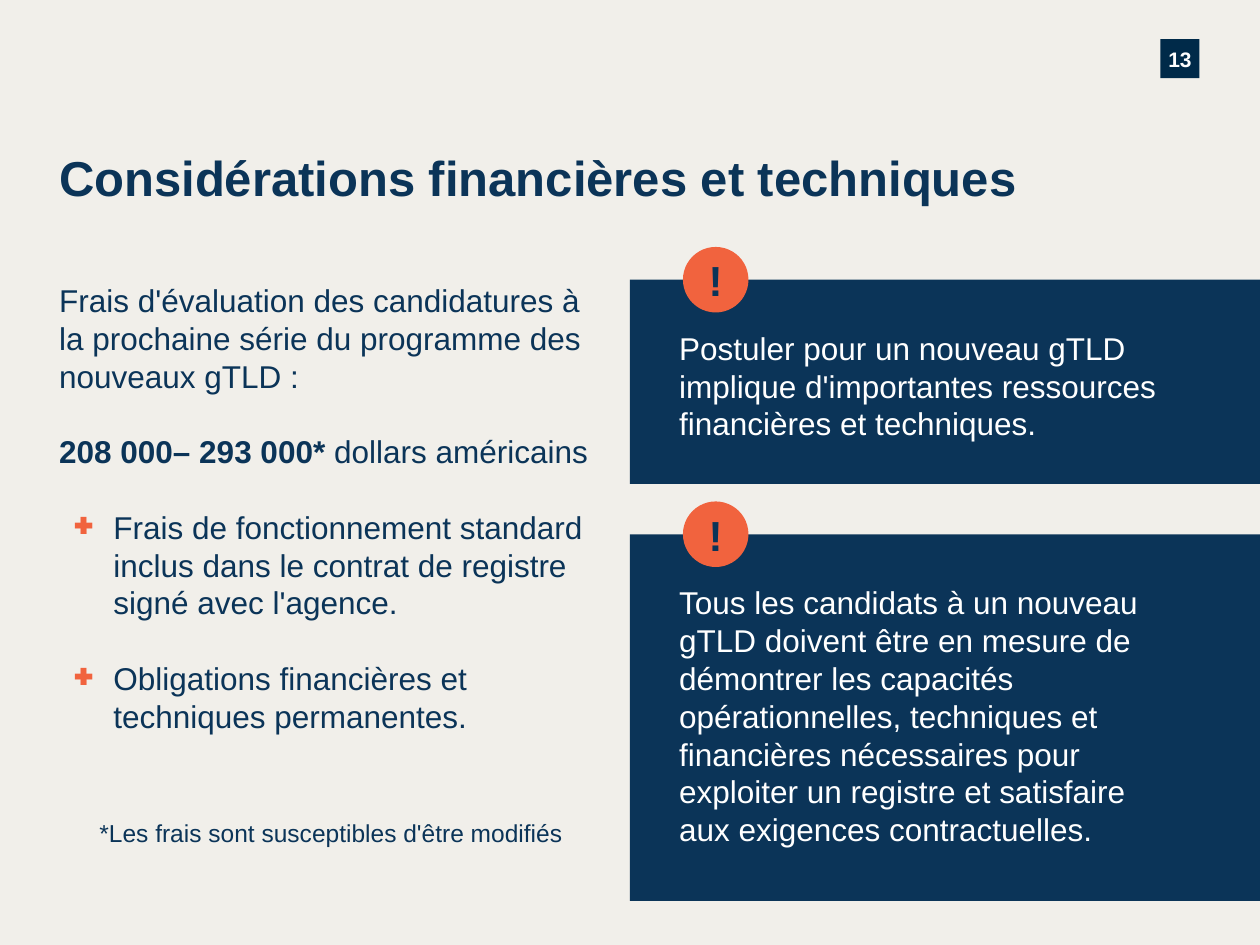
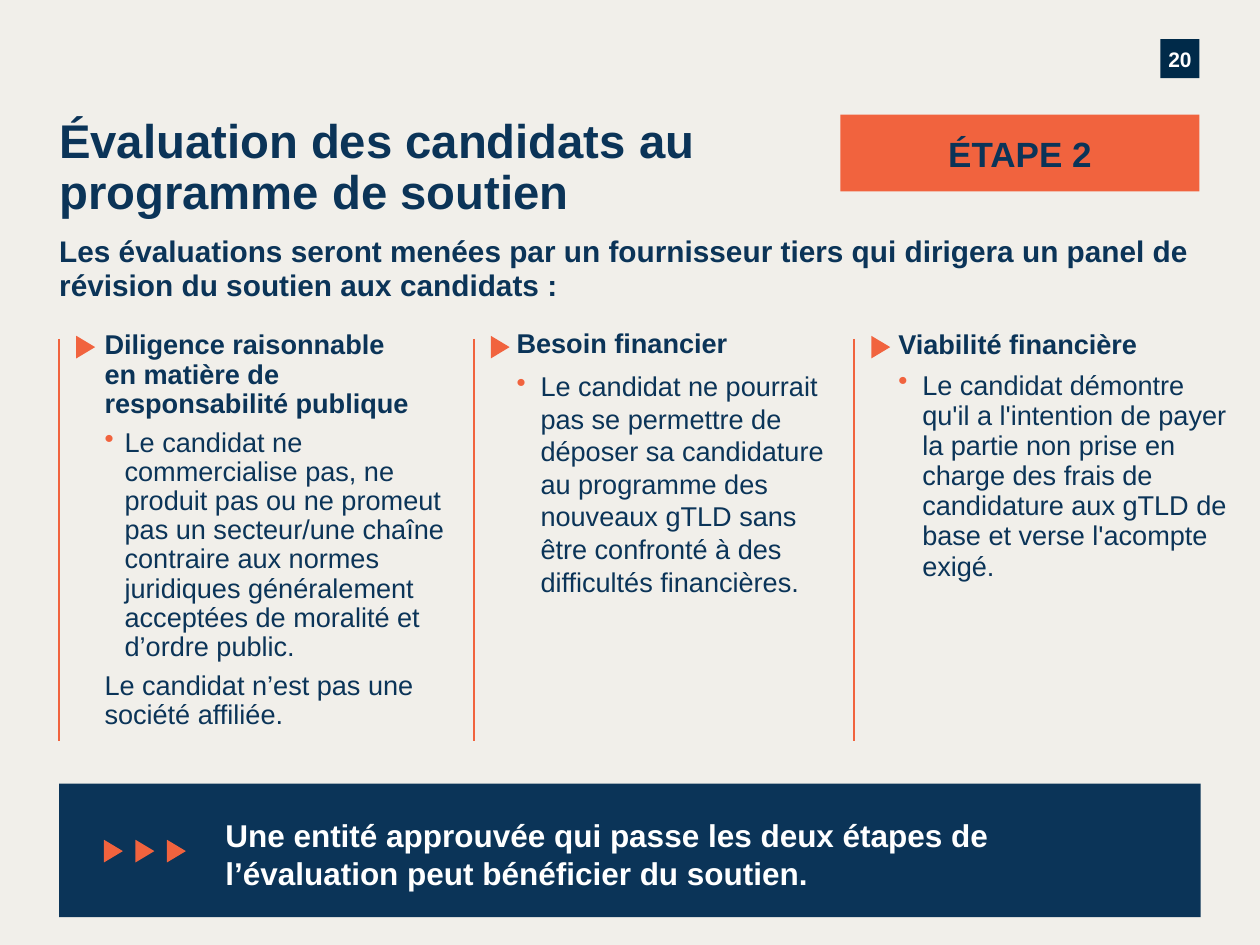
from dataclasses import dataclass
from typing import Optional, Sequence, Union

from lxml import etree
from pptx import Presentation
from pptx.dml.color import RGBColor
from pptx.enum.shapes import MSO_CONNECTOR, MSO_SHAPE
from pptx.enum.text import MSO_ANCHOR, PP_ALIGN
from pptx.oxml.ns import qn
from pptx.util import Inches, Pt

RECTANGLE = MSO_SHAPE.RECTANGLE
OVAL = MSO_SHAPE.OVAL
TRIANGLE = MSO_SHAPE.ISOSCELES_TRIANGLE
STRAIGHT = MSO_CONNECTOR.STRAIGHT
TOP = MSO_ANCHOR.TOP
MIDDLE = MSO_ANCHOR.MIDDLE
LEFT = PP_ALIGN.LEFT
CENTER = PP_ALIGN.CENTER


@dataclass(frozen=True)
class Theme:
    font: str = "Arial"
    paper: str = "F1EFEA"
    navy: str = "0B3458"
    badge: str = "002A49"
    orange: str = "F1633E"
    white: str = "FFFFFF"
    title: float = 28
    long_title: float = 27
    mark: float = 24
    stage: float = 20
    body: float = 18
    lead: float = 17
    criterion: float = 15.5
    note: float = 14
    number: float = 12
    body_line: float = 21.6
    margin: float = 0.47
    content_width: float = 9.06


THEME = Theme()


@dataclass(frozen=True)
class Area:
    left: float
    top: float
    width: float
    height: float


@dataclass(frozen=True)
class Insets:
    left: float = 0
    top: float = 0
    right: float = 0
    bottom: float = 0


@dataclass(frozen=True)
class Span:
    text: str
    bold: bool = False


@dataclass(frozen=True)
class Para:
    spans: Sequence[Span]
    size: float
    color: str = THEME.navy
    align: PP_ALIGN = LEFT
    line: Optional[Union[float, Pt]] = None
    before: float = 0
    after: float = 0
    bullet: str = ""
    indent: float = 0
    hanging: float = 0


@dataclass(frozen=True)
class Callout:
    top: float
    height: float
    text: str


@dataclass(frozen=True)
class Criterion:
    rule_left: float
    text_left: float
    text_top: float
    width: float
    height: float
    heading: str
    detail: str
    heading_line: float
    detail_line: float
    indent: float
    closing: str = ""


CALLOUTS = (
    Callout(4.24, 2.91, "Tous les candidats à un nouveau gTLD doivent être en mesure de "
            "démontrer les capacités opérationnelles, techniques et financières nécessaires "
            "pour exploiter un registre et satisfaire aux exigences contractuelles."),
    Callout(2.22, 1.62, "Postuler pour un nouveau gTLD implique d'importantes ressources "
            "financières et techniques."),
)

CRITERIA = (
    Criterion(0.47, 0.83, 2.63, 2.76, 3.24,
              "Diligence raisonnable\nen matière de responsabilité publique",
              "Le candidat ne commercialise pas, ne produit pas ou ne promeut pas un "
              "secteur/une chaîne contraire aux normes juridiques généralement acceptées "
              "de moralité et d’ordre public.",
              16.6, 16.6, 0.16, "Le candidat n’est pas une société affiliée."),
    Criterion(3.76, 4.1, 2.62, 2.54, 2.53, "Besoin financier",
              "Le candidat ne pourrait pas se permettre de déposer sa candidature au "
              "programme des nouveaux gTLD sans être confronté à des difficultés financières.",
              16.6, 18.6, 0.19),
    Criterion(6.78, 7.13, 2.62, 2.66, 3.03, "Viabilité financière",
              "Le candidat démontre qu'il a l'intention de payer la partie non prise en "
              "charge des frais de candidature aux gTLD de base et verse l'acompte exigé.",
              17.2, 17.2, 0.19),
)


def rgb(color: str) -> RGBColor:
    return RGBColor.from_string(color)


def place(area: Area) -> tuple:
    return tuple(Inches(n) for n in (area.left, area.top, area.width, area.height))


def add_bullet(paragraph, para: Para) -> None:
    properties = paragraph._p.get_or_add_pPr()
    properties.set("marL", str(Inches(para.indent)))
    properties.set("indent", str(Inches(-para.hanging)))
    tint = etree.SubElement(properties, qn("a:buClr"))
    etree.SubElement(tint, qn("a:srgbClr")).set("val", THEME.orange)
    etree.SubElement(properties, qn("a:buChar")).set("char", para.bullet)


def add_span(paragraph, span: Span, para: Para) -> None:
    for index, piece in enumerate(span.text.split("\n")):
        if index:
            paragraph.add_line_break()
        run = paragraph.add_run()
        run.text = piece
        run.font.name = THEME.font
        run.font.size = Pt(para.size)
        run.font.bold = span.bold
        run.font.color.rgb = rgb(para.color)


def write(box, paras: Sequence[Para], insets: Insets = Insets(), anchor: MSO_ANCHOR = TOP) -> None:
    frame = box.text_frame
    frame.word_wrap = True
    frame.vertical_anchor = anchor
    frame.margin_left, frame.margin_top = Inches(insets.left), Inches(insets.top)
    frame.margin_right, frame.margin_bottom = Inches(insets.right), Inches(insets.bottom)
    for index, para in enumerate(paras):
        paragraph = frame.add_paragraph() if index else frame.paragraphs[0]
        if para.bullet:
            add_bullet(paragraph, para)
        paragraph.alignment = para.align
        if para.line:
            paragraph.line_spacing = para.line
        paragraph.space_before = Pt(para.before)
        paragraph.space_after = Pt(para.after)
        for span in para.spans:
            add_span(paragraph, span, para)


def add_text(page, area: Area, paras: Sequence[Para], insets: Insets = Insets()) -> None:
    write(page.shapes.add_textbox(*place(area)), paras, insets)


def add_block(page, kind: MSO_SHAPE, area: Area, color: str):
    block = page.shapes.add_shape(kind, *place(area))
    block.shadow.inherit = False
    block.fill.solid()
    block.fill.fore_color.rgb = rgb(color)
    block.line.fill.background()
    return block


def add_label(page, kind: MSO_SHAPE, area: Area, fill: str, text: str, size: float,
              color: str = THEME.navy, line: Optional[float] = None) -> None:
    para = Para([Span(text, True)], size, color, CENTER, line)
    write(add_block(page, kind, area, fill), [para], anchor=MIDDLE)


def add_pointer(page, left: float, top: float) -> None:
    add_block(page, TRIANGLE, Area(left, top, 0.18, 0.15), THEME.orange).rotation = 90


def add_rule(page, left: float, top: float, bottom: float) -> None:
    rule = page.shapes.add_connector(STRAIGHT, Inches(left), Inches(top), Inches(left), Inches(bottom))
    rule.line.color.rgb = rgb(THEME.orange)
    rule.line.width = Pt(1.25)
    etree.SubElement(rule._element.spPr, qn("a:effectLst"))


def add_page(deck, number: int, title: Para, title_area: Area):
    page = deck.slides.add_slide(deck.slide_layouts[6])
    page.background.fill.solid()
    page.background.fill.fore_color.rgb = rgb(THEME.paper)
    add_label(page, RECTANGLE, Area(9.21, 0.31, 0.31, 0.31), THEME.badge, str(number),
              THEME.number, THEME.white, 1.08)
    add_text(page, title_area, [title])
    return page


def add_callout(page, callout: Callout) -> None:
    panel = add_block(page, RECTANGLE, Area(5, callout.top, 5, callout.height), THEME.navy)
    write(panel, [Para([Span(callout.text)], THEME.body, THEME.white)],
          Insets(0.39, 0.39, 0.67, 0.3))
    add_label(page, OVAL, Area(5.42, callout.top - 0.26, 0.52, 0.52), THEME.orange, "!", THEME.mark)


def add_criterion(page, criterion: Criterion) -> None:
    paras = [
        Para([Span(criterion.heading, True)], THEME.criterion, line=Pt(criterion.heading_line)),
        Para([Span(criterion.detail)], THEME.criterion, line=Pt(criterion.detail_line), before=6,
             bullet="•", indent=criterion.indent, hanging=criterion.indent),
    ]
    if criterion.closing:
        paras.append(Para([Span(criterion.closing)], THEME.criterion,
                          line=Pt(criterion.detail_line), before=6))
    add_rule(page, criterion.rule_left, 2.69, 5.88)
    add_pointer(page, criterion.rule_left + 0.12, 2.68)
    add_text(page, Area(criterion.text_left, criterion.text_top, criterion.width, criterion.height), paras)


def build_costs(deck) -> None:
    title = Para([Span("Considérations financières et techniques", True)], THEME.title)
    page = add_page(deck, 13, title, Area(THEME.margin, 1.17, 8.15, 1.09))
    paras = [
        Para([Span("Frais d'évaluation des candidatures à la prochaine série du programme "
                   "des nouveaux gTLD :")], THEME.body),
        Para([Span("208 000– 293 000*", True), Span(" dollars américains")], THEME.body,
             before=THEME.body_line),
    ]
    for text in ("Frais de fonctionnement standard inclus dans le contrat de registre signé "
                 "avec l'agence.", "Obligations financières et techniques permanentes."):
        paras.append(Para([Span(text)], THEME.body, before=THEME.body_line,
                          bullet="✚", indent=0.43, hanging=0.31))
    add_text(page, Area(THEME.margin, 2.23, 4.26, 4.26), paras)
    for callout in CALLOUTS:
        add_callout(page, callout)
    add_text(page, Area(0.69, 6.44, 4.05, 0.34),
             [Para([Span("*Les frais sont susceptibles d'être modifiés")], THEME.note)],
             Insets(0.1, 0.05, 0.1, 0.05))


def build_evaluation(deck) -> None:
    title = Para([Span("Évaluation des candidats au programme de soutien", True)],
                 THEME.long_title, line=Pt(28.6))
    page = add_page(deck, 20, title, Area(THEME.margin, 0.94, 5.88, 0.5))
    add_label(page, RECTANGLE, Area(6.67, 0.91, 2.85, 0.61), THEME.orange, "ÉTAPE 2", THEME.stage)
    lead = Span("Les évaluations seront menées par un fournisseur tiers qui dirigera un panel "
                "de révision du soutien aux candidats :", True)
    add_text(page, Area(THEME.margin, 1.86, THEME.content_width, 0.63),
             [Para([lead], THEME.lead, line=Pt(19.6))])
    for criterion in CRITERIA:
        add_criterion(page, criterion)
    add_block(page, RECTANGLE, Area(THEME.margin, 6.22, THEME.content_width, 1.06), THEME.navy)
    for index in range(3):
        add_pointer(page, 0.81 + 0.25 * index, 6.68)
    outcome = Span("Une entité approuvée qui passe les deux étapes de l’évaluation peut "
                   "bénéficier du soutien.", True)
    add_text(page, Area(1.69, 6.38, 7.48, 0.46), [Para([outcome], THEME.body, THEME.white)],
             Insets(0.1, 0.1, 0.1, 0.1))


def main() -> None:
    deck = Presentation()
    deck.slide_width = Inches(10)
    deck.slide_height = Inches(7.5)
    build_costs(deck)
    build_evaluation(deck)
    deck.save("out.pptx")


if __name__ == "__main__":
    main()
